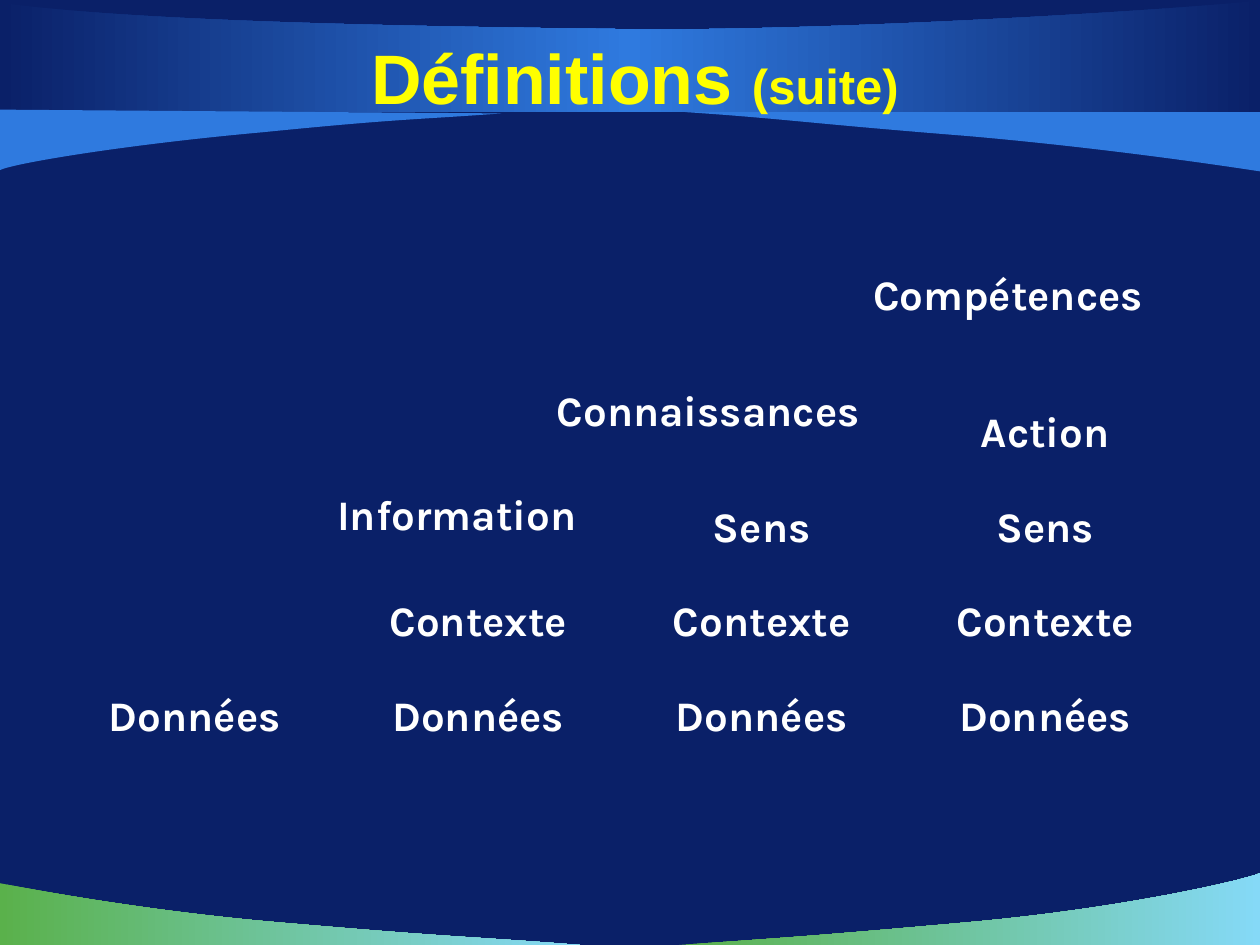
from dataclasses import dataclass

from lxml import etree
from pptx import Presentation
from pptx.dml.color import RGBColor
from pptx.enum.shapes import MSO_SHAPE
from pptx.enum.text import MSO_ANCHOR, PP_ALIGN
from pptx.oxml.ns import qn
from pptx.util import Inches, Pt

RECT = MSO_SHAPE.RECTANGLE
CENTER = PP_ALIGN.CENTER
TOP, MIDDLE = MSO_ANCHOR.TOP, MSO_ANCHOR.MIDDLE
TITLE_ONLY = 5


@dataclass(frozen=True)
class Theme:
    navy: str = "0A2068"
    blue: str = "2F7ADF"
    green: str = "5AB14B"
    sky: str = "85D9F7"
    white: str = "FFFFFF"
    yellow: str = "FFFF00"
    title_font: str = "Arial"
    body_font: str = "Karla"
    title_size: int = 40
    subtitle_size: int = 28
    body_size: int = 24


def rgb(value):
    return RGBColor.from_string(value)


class SlideBuilder:
    def __init__(self, slide, theme):
        self.s, self.theme = slide, theme

    def background(self):
        fill = self.s.background.fill
        fill.solid()
        fill.fore_color.rgb = rgb(self.theme.navy)

    def style_run(self, r, font, size, color):
        r.font.name, r.font.size, r.font.bold = font, Pt(size), True
        r.font.color.rgb = rgb(color)

    def bend(self, sp, count):
        """Turn the first segments, three at a time, into Bezier curves."""
        path = next(sp._element.iter(qn("a:path")))
        lines = path.findall(qn("a:lnTo"))[:3 * count]
        for i in range(0, len(lines), 3):
            curve = etree.SubElement(path, qn("a:cubicBezTo"))
            lines[i].addprevious(curve)
            for line in lines[i:i + 3]:
                curve.append(line[0])
                path.remove(line)

    def wave(self, start, curves, corners, colors):
        """Curved band: one colour is solid, several make an even gradient."""
        points = [start] + [point for curve in curves for point in curve] + corners
        points = [(Inches(x), Inches(y)) for x, y in points]
        builder = self.s.shapes.build_freeform(*points[0], scale=1.0)
        builder.add_line_segments(points[1:], close=True)
        sp = builder.convert_to_shape()
        self.bend(sp, len(curves))
        sp.shadow.inherit = False
        sp.line.fill.background()
        if len(colors) == 1:
            sp.fill.solid()
            sp.fill.fore_color.rgb = rgb(colors[0])
            return
        sp.fill.gradient()
        sp.fill.gradient_angle = 0
        stops = next(sp._element.spPr.iter(qn("a:gsLst")))
        for old in list(stops):
            stops.remove(old)
        for i, color in enumerate(colors):
            pos = str(100000 * i // (len(colors) - 1))
            stop = etree.SubElement(stops, qn("a:gs"), pos=pos)
            etree.SubElement(stop, qn("a:srgbClr"), val=color)

    def label(self, sp, text):
        tf = sp.text_frame
        tf.text = text
        tf.word_wrap = True
        tf.vertical_anchor = TOP
        p = tf.paragraphs[0]
        p.alignment = CENTER
        t = self.theme
        self.style_run(p.runs[0], t.body_font, t.body_size, t.white)

    def block(self, shapes, text, x, y):
        sp = shapes.add_shape(RECT, Inches(x), Inches(y), Inches(1.75), Inches(0.5))
        sp.shadow.inherit = False
        sp.fill.solid()
        sp.fill.fore_color.rgb = rgb(self.theme.navy)
        sp.line.fill.background()
        self.label(sp, text)

    def heading(self, shapes, text, x, y, width):
        sp = shapes.add_textbox(Inches(x), Inches(y), Inches(width), Inches(0.51))
        self.label(sp, text)

    def title(self, main, suffix):
        sp = self.s.shapes.title
        sp.left, sp.top = Inches(0.5), Inches(0.3)
        sp.width, sp.height = Inches(9.08), Inches(0.62)
        tf = sp.text_frame
        tf.vertical_anchor = MIDDLE
        p = tf.paragraphs[0]
        p.alignment = CENTER
        t = self.theme
        for text, size in ((main, t.title_size), (suffix, t.subtitle_size)):
            r = p.add_run()
            r.text = text
            self.style_run(r, t.title_font, size, t.yellow)
        # Bring the title in front of the bands
        self.s.shapes._spTree.append(sp._element)


def main():
    prs = Presentation()
    prs.slide_width, prs.slide_height = Inches(10), Inches(7.5)
    theme = Theme()
    page = SlideBuilder(prs.slides.add_slide(prs.slide_layouts[TITLE_ONLY]), theme)
    page.background()

    # Bottom waves
    meadow = [theme.green, theme.sky]
    page.wave((4.6, 7.5),
              [((3.84, 7.44), (3.58, 7.44), (2.32, 7.33)),
               ((1.06, 7.23), (0.01, 7.01), (0, 7.01))],
              [(0, 7.5)], meadow)
    page.wave((5.39, 7.5),
              [((6.14, 7.45), (6.46, 7.43), (7.69, 7.32)),
               ((8.92, 7.21), (9.9, 6.98), (10, 6.93))],
              [(10, 7.5)], meadow)

    # Top banner and its two side waves
    page.wave((5.44, 0.89),
              [((6.2, 0.94), (6.42, 0.98), (7.68, 1.08)),
               ((8.94, 1.19), (9.99, 1.36), (10, 1.36))],
              [(10, 0.88)], [theme.blue])
    page.wave((10, 0),
              [((9.64, 0.06), (6.53, 0.26), (4.87, 0.23)),
               ((3.21, 0.21), (1.01, 0.17), (0, 0.02))],
              [(0, 0.89), (10, 0.89)], [theme.navy, theme.blue, theme.navy])
    page.wave((3.98, 0.9),
              [((3.31, 0.95), (3.18, 0.94), (2.08, 1.05)),
               ((0.97, 1.15), (0.09, 1.3), (0, 1.35))],
              [(0, 0.87)], [theme.blue])

    # Staircase: each column stacks one more layer under its heading
    layers = ["Données", "Contexte", "Sens", "Action"]
    headings = [None,
                ("Information", 2.25, 3.83, 2.75),
                ("Connaissances", 4.08, 3, 3.08),
                ("Compétences", 6.5, 2.08, 3)]
    for col, heading in enumerate(headings):
        shapes = page.s.shapes
        if heading:
            shapes = shapes.add_group_shape().shapes
        for row, text in enumerate(layers[:col + 1]):
            page.block(shapes, text, 0.67 + 2.25 * col, 5.42 - 0.75 * row)
        if heading:
            page.heading(shapes, *heading)

    page.title("Définitions ", "(suite)")
    prs.save("out.pptx")


if __name__ == "__main__":
    main()
